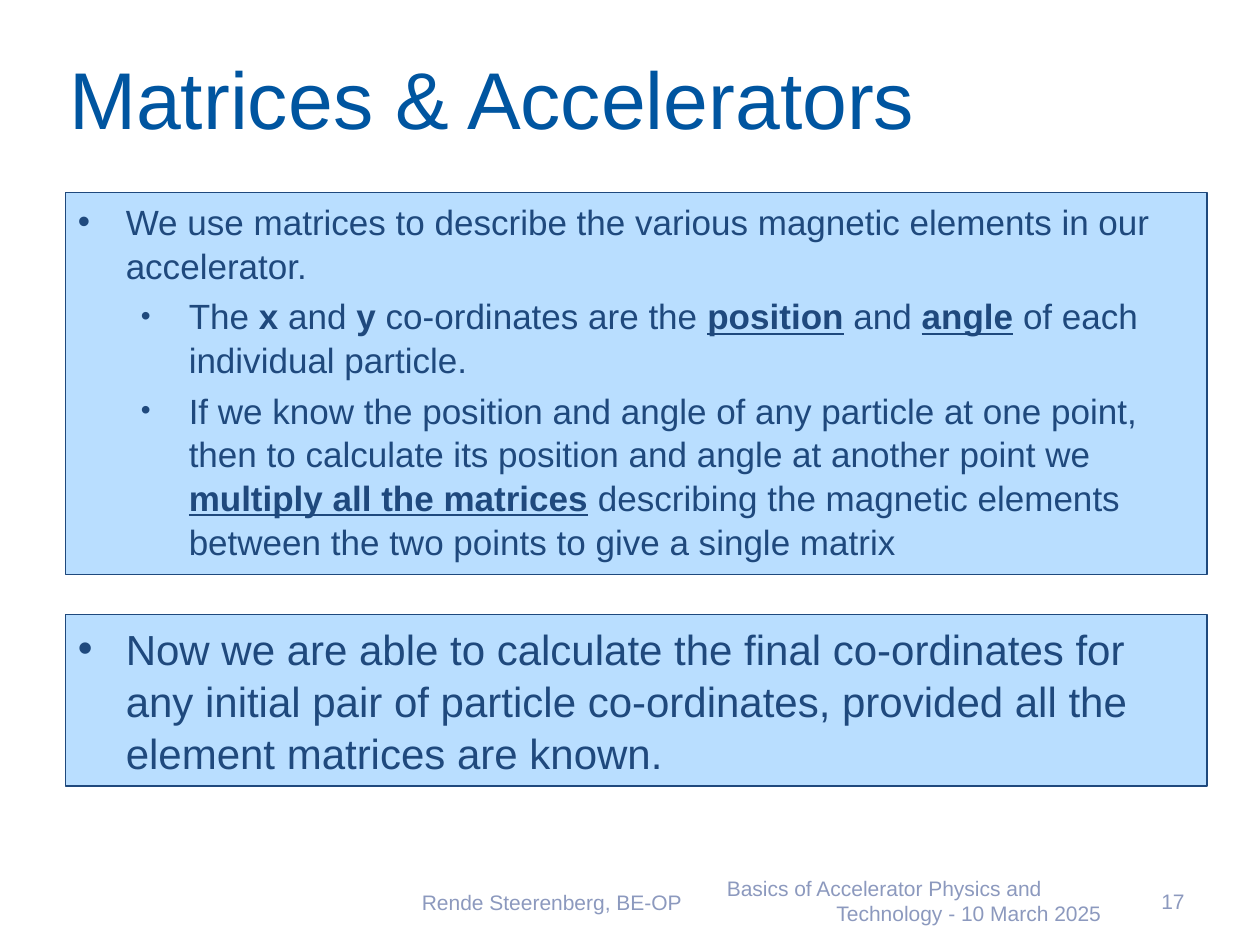
from dataclasses import dataclass

from lxml.etree import SubElement
from pptx import Presentation
from pptx.dml.color import RGBColor as Rgb
from pptx.enum.shapes import MSO_SHAPE as Shape
from pptx.enum.text import MSO_ANCHOR as Anchor, PP_ALIGN as Align
from pptx.oxml.ns import qn
from pptx.util import Inches, Pt


@dataclass(frozen=True)
class Theme:
    """Colours, font and type sizes of the deck."""
    font: str = "Arial"
    title: str = "0055A0"
    body: str = "1F497D"
    panel: str = "B9DEFF"
    footer: str = "8C99BE"
    title_size: int = 46
    body_size: int = 20
    summary_size: int = 24
    footer_size: int = 12
    leading: float = 1.04


class SlideBuilder:
    """Adds styled elements to a page, placed on a grid of 100 columns by 75 rows."""

    def __init__(self, deck, theme):
        """Start a blank page."""
        self.theme = theme
        self.page = deck.slides.add_slide(deck.slide_layouts[6])
        self.column = deck.slide_width / 100
        self.row = deck.slide_height / 75

    def place(self, left, top, width, height):
        """Turn grid units into lengths."""
        return (round(left * self.column), round(top * self.row),
                round(width * self.column), round(height * self.row))

    def style(self, font, size, color):
        """Apply face, size and colour."""
        font.name, font.size = self.theme.font, Pt(size)
        font.color.rgb = Rgb.from_string(color)

    def label(self, area, lines, size, color, inset=0.1):
        """Add a vertically centred text box of (text, alignment) lines."""
        frame = self.page.shapes.add_textbox(*self.place(*area)).text_frame
        frame.word_wrap = True
        frame.vertical_anchor = Anchor.MIDDLE
        frame.margin_left = frame.margin_right = Inches(inset)
        frame.text = "\n".join(text for text, align in lines)
        for para, (text, align) in zip(frame.paragraphs, lines):
            para.alignment = align
            for span in para.runs:
                self.style(span.font, size, color)

    def panel(self, area, points, size):
        """Add a filled rectangle of (level, spans) bullet points."""
        box = self.page.shapes.add_shape(Shape.RECTANGLE, *self.place(*area))
        box.shadow.inherit = False
        box.fill.solid()
        box.fill.fore_color.rgb = Rgb.from_string(self.theme.panel)
        box.line.color.rgb = Rgb.from_string(self.theme.body)
        box.line.width = Pt(0.75)
        frame = box.text_frame
        frame.word_wrap = True
        frame.vertical_anchor = Anchor.TOP
        for index, (level, spans) in enumerate(points):
            para = frame.add_paragraph() if index else frame.paragraphs[0]
            self.bullet(para, level)
            para.space_before = Pt(size * 0.2 if index else 0)
            for text, marks in spans:
                span = para.add_run()
                span.text = text
                self.style(span.font, size, self.theme.body)
                span.font.bold = "b" in marks
                span.font.underline = "u" in marks

    def bullet(self, para, level):
        """Give a paragraph its level, hanging indent and bullet."""
        para.level, para.alignment = level, Align.LEFT
        para.line_spacing = self.theme.leading
        props = para._p.get_or_add_pPr()
        props.set("marL", str(Inches(0.38 + level * 0.5)))
        props.set("indent", str(Inches(-0.38)))
        if level:
            SubElement(props, qn("a:buSzPct"), val="80000")
        SubElement(props, qn("a:buFont"), typeface=self.theme.font)
        SubElement(props, qn("a:buChar"), char="•")


def main():
    """Build and save the slide."""
    deck = Presentation()
    deck.slide_width, deck.slide_height = Inches(10), Inches(7.5)
    theme = Theme()
    slide = SlideBuilder(deck, theme)
    slide.label((5, 2.6, 90, 10.3), [("Matrices & Accelerators", Align.LEFT)],
                theme.title_size, theme.title, inset=0.05)

    footers = [
        ((32.5, 69.6, 23.3, 4), [("Rende Steerenberg, BE-OP", Align.LEFT)]),
        ((56.7, 69.5, 31.7, 4), [("Basics of Accelerator Physics and", Align.LEFT),
                                 ("Technology - 10 March 2025", Align.RIGHT)]),
        ((89.5, 69.5, 5.5, 4), [("17", Align.RIGHT)]),
    ]
    for area, lines in footers:
        slide.label(area, lines, theme.footer_size, theme.footer)

    slide.panel((5.2, 15.3, 90.6, 30.3), [
        (0, [("We use matrices to describe the various magnetic elements in our accelerator.", "")]),
        (1, [("The ", ""), ("x ", "b"), ("and ", ""), ("y ", "b"),
             ("co-ordinates are the ", ""), ("position", "bu"), (" and ", ""),
             ("angle", "bu"), (" of each individual particle.", "")]),
        (1, [("If we know the position and angle of any particle at one point, then to "
              "calculate its position and angle at another point we ", ""),
             ("multiply all the matrices", "bu"),
             (" describing the magnetic elements between the two points to give a "
              "single matrix", "")]),
    ], theme.body_size)
    slide.panel((5.2, 48.8, 90.6, 13.6), [
        (0, [("Now we are able to calculate the final co-ordinates for any initial pair of "
              "particle co-ordinates, provided all the element matrices are known.", "")]),
    ], theme.summary_size)
    deck.save("out.pptx")


if __name__ == "__main__":
    main()
